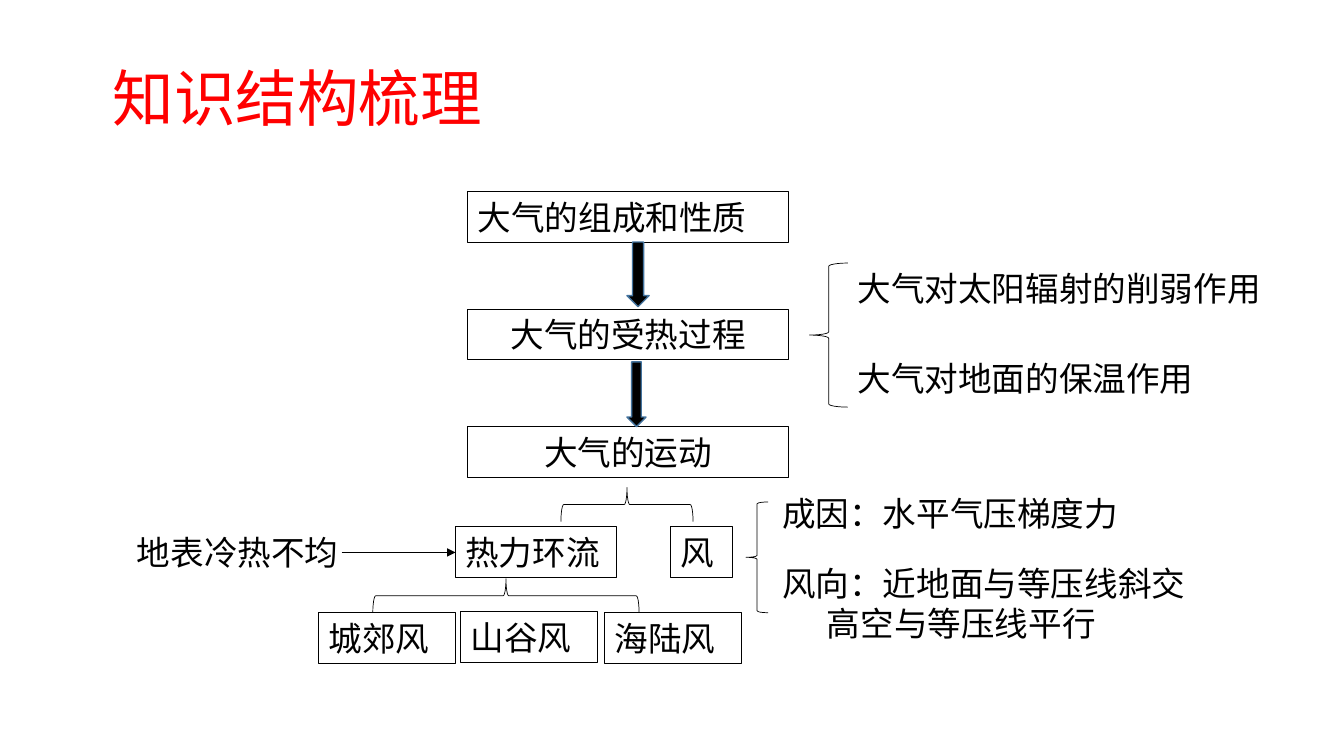
import pptx
import pptx.util
import pptx.dml.color
import pptx.enum.shapes
import pptx.enum.text
import pptx.oxml.ns
import lxml.etree

Cm = pptx.util.Cm
Pt = pptx.util.Pt
SHAPES = pptx.enum.shapes.MSO_SHAPE
ALIGN = pptx.enum.text.PP_ALIGN
BLACK = pptx.dml.color.RGBColor(0, 0, 0)
RED = pptx.dml.color.RGBColor(0xFF, 0, 0)
BLUE = pptx.dml.color.RGBColor(0x43, 0x73, 0x9E)
FONT = "Noto Sans CJK SC"
qn = pptx.oxml.ns.qn

deck = pptx.Presentation()
deck.slide_width, deck.slide_height = Cm(33.87), Cm(19.05)
page = deck.slides.add_slide(deck.slide_layouts[6])


def add_shape(kind, left, top, width, height, line_color, line_width):
    shape = page.shapes.add_shape(kind, Cm(left), Cm(top), Cm(width), Cm(height))
    shape.shadow.inherit = False
    shape.fill.background()
    shape.line.color.rgb = line_color
    shape.line.width = Pt(line_width)
    return shape


def write(box, text, size=24, color=BLACK, align=ALIGN.LEFT):
    frame = box.text_frame
    frame.word_wrap = True
    frame.vertical_anchor = pptx.enum.text.MSO_ANCHOR.TOP
    frame.text = text
    for para in frame.paragraphs:
        para.alignment = align
        for span in para.runs:
            span.font.name = FONT
            span.font.size = Pt(size)
            span.font.color.rgb = color
            east_asian = lxml.etree.SubElement(span.font._element, qn("a:ea"))
            east_asian.set("typeface", FONT)


# Title
title = page.shapes.add_textbox(Cm(2.59), Cm(1.6), Cm(12.45), Cm(2.36))
write(title, "知识结构梳理", 44, RED)
title.text_frame.paragraphs[0].line_spacing = 0.9

# Framed topics: main chain, then branches and kinds of wind
topics = {}
for text, left, top, width, align in [
    ("大气的组成和性质", 11.79, 4.83, 8.08, ALIGN.LEFT),
    ("大气的受热过程", 11.79, 7.79, 8.08, ALIGN.CENTER),
    ("大气的运动", 11.79, 10.75, 8.08, ALIGN.CENTER),
    ("热力环流", 11.48, 13.28, 4.06, ALIGN.LEFT),
    ("风", 16.89, 13.28, 1.57, ALIGN.LEFT),
    ("城郊风", 8.03, 15.44, 3.45, ALIGN.LEFT),
    ("山谷风", 11.61, 15.42, 3.45, ALIGN.LEFT),
    ("海陆风", 15.24, 15.44, 3.45, ALIGN.LEFT),
]:
    topics[text] = add_shape(SHAPES.RECTANGLE, left, top, width, 1.28, BLACK, 0.75)
    write(topics[text], text, align=align)

# Block arrows down the main chain
for top, width in [(6.1, 0.56), (9.12, 0.48)]:
    arrow = add_shape(SHAPES.DOWN_ARROW, 15.8, top, width, 1.63, BLUE, 1)
    arrow.fill.solid()
    arrow.fill.fore_color.rgb = BLACK

# Braces
for left, top, width, height, turn in [
    (20.4, 6.63, 0.97, 3.63, 0),
    (15.37, 11.05, 0.86, 3.33, 90),
    (12.32, 11.66, 0.86, 6.71, 90),
    (18.8, 12.65, 0.56, 2.79, 0),
]:
    brace = add_shape(SHAPES.LEFT_BRACE, left, top, width, height, BLACK, 0.5)
    brace.rotation = turn

# Unframed notes
for text, left, top, width, height in [
    ("大气对太阳辐射的削弱作用", 21.36, 6.63, 10.69, 1.28),
    ("大气对地面的保温作用", 21.36, 8.89, 10.69, 1.28),
    ("地表冷热不均", 3.2, 13.28, 5.82, 1.28),
    ("成因：水平气压梯度力", 19.46, 12.29, 10.36, 1.28),
    ("风向：近地面与等压线斜交\n高空与等压线平行", 19.46, 14.05, 12.34, 2.31),
]:
    note = page.shapes.add_textbox(Cm(left), Cm(top), Cm(width), Cm(height))
    write(note, text)
    for para in note.text_frame.paragraphs[1:]:
        para._p.get_or_add_pPr().set("marL", str(Cm(1.13)))

# Arrow from the cause to thermal circulation
cause = page.shapes.add_connector(
    pptx.enum.shapes.MSO_CONNECTOR.STRAIGHT, Cm(8.61), Cm(13.92), Cm(11.48), Cm(13.92))
cause.end_connect(topics["热力环流"], 1)
cause.line.color.rgb = BLACK
cause.line.width = Pt(0.5)
head = lxml.etree.SubElement(cause.line._get_or_add_ln(), qn("a:tailEnd"))
head.set("type", "triangle")
lxml.etree.SubElement(cause._element.spPr, qn("a:effectLst"))

deck.save("out.pptx")
